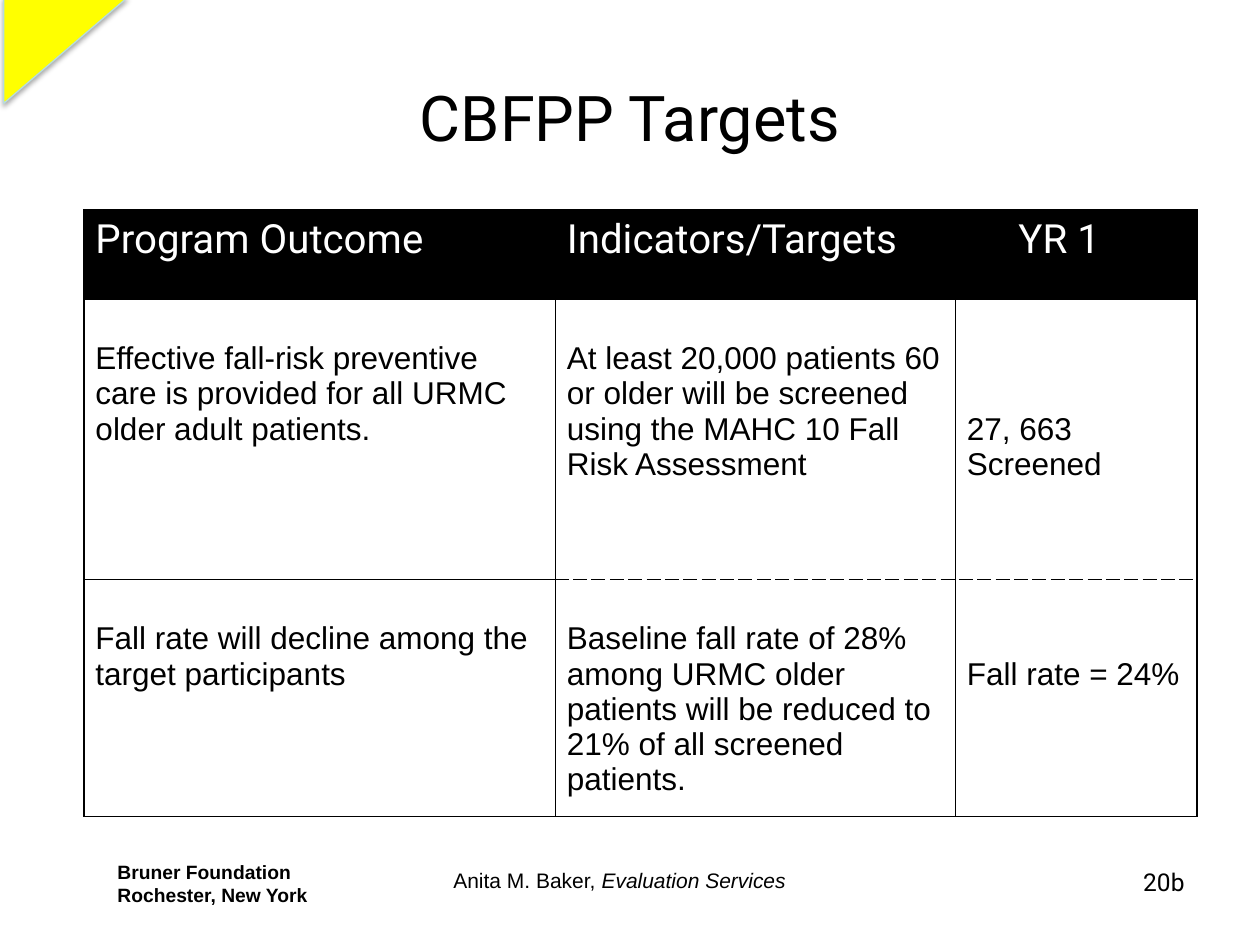
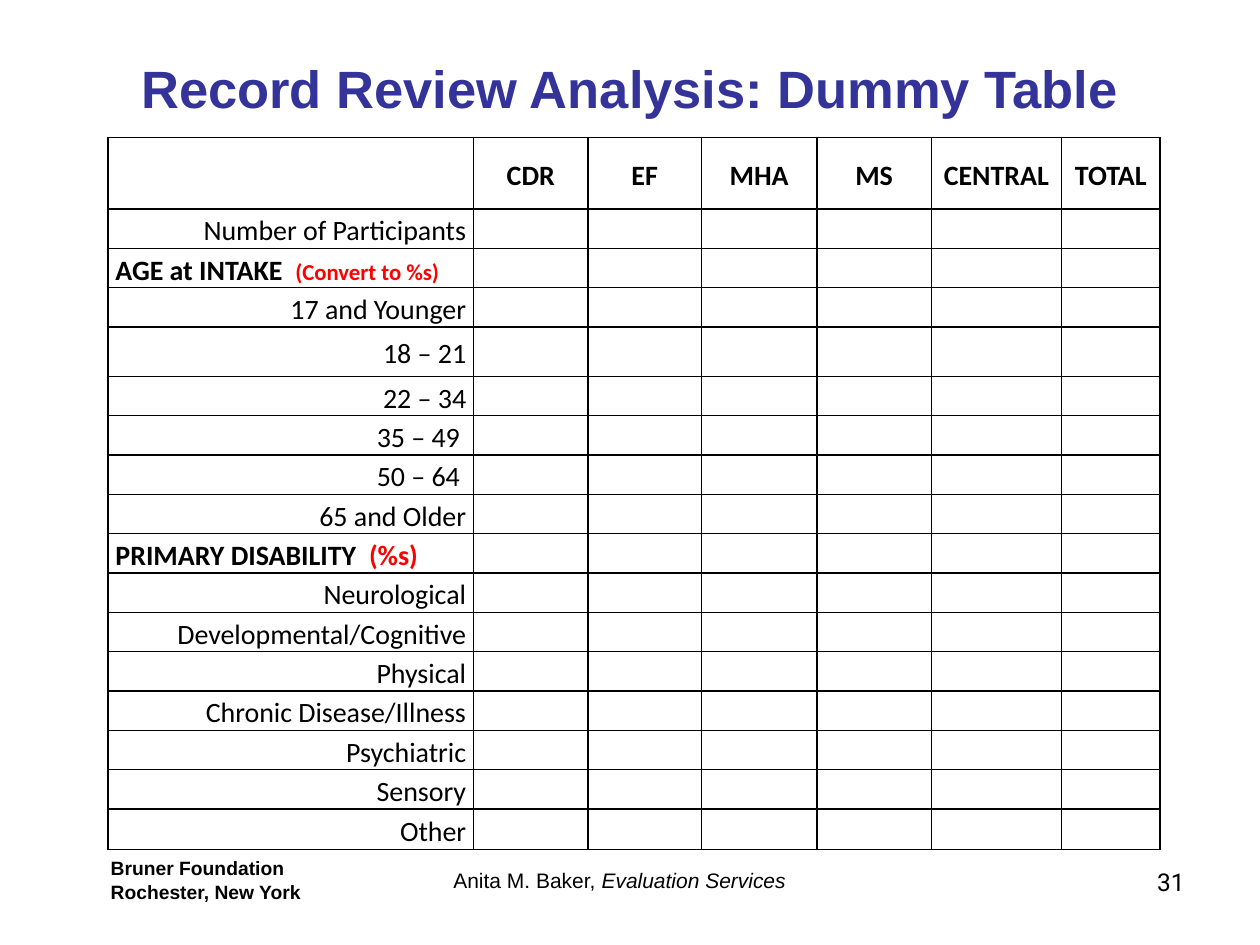
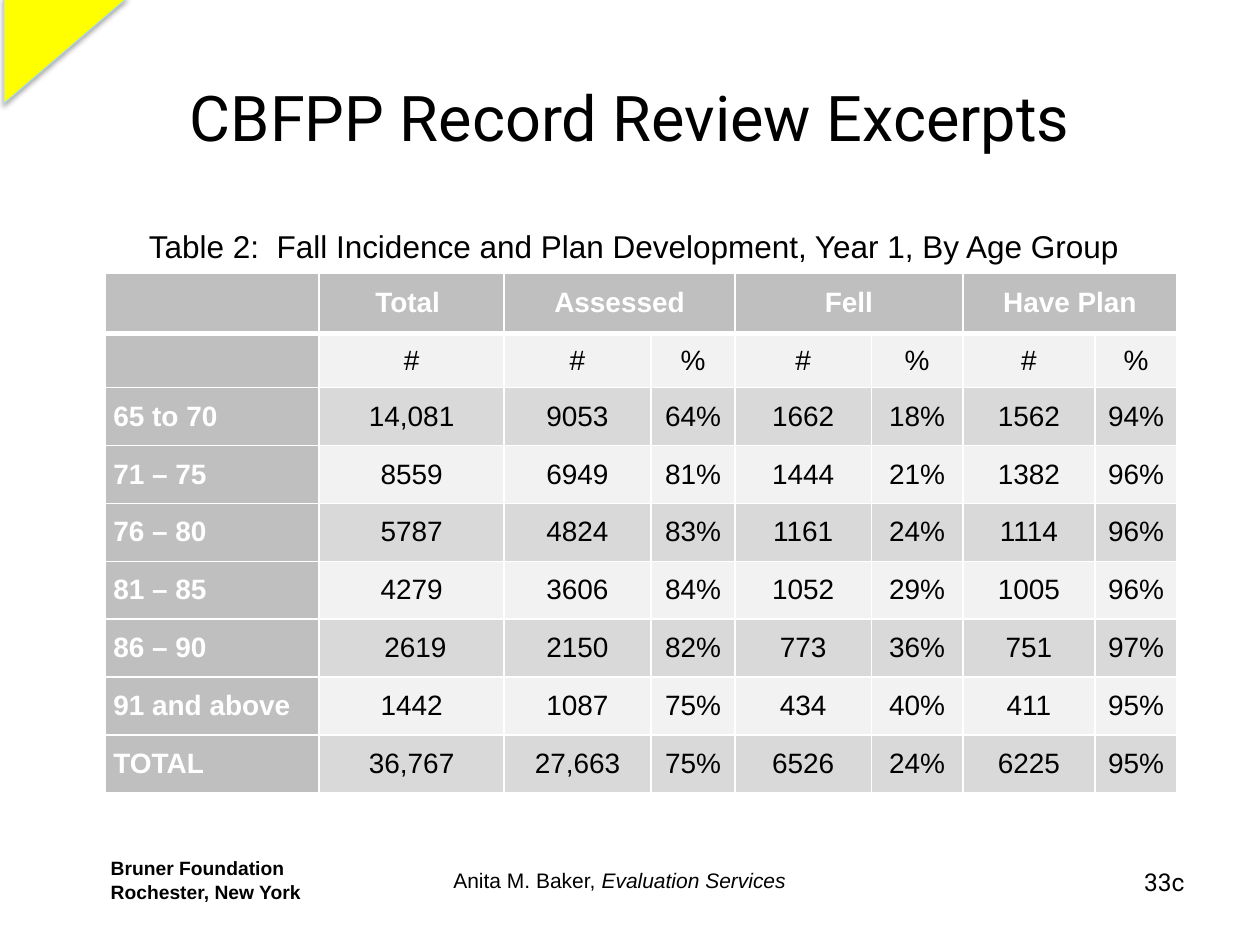
from lxml import etree
from pptx import Presentation
from pptx import util as u
from pptx.dml.color import RGBColor
from pptx.enum import shapes, text
from pptx.oxml import ns

COLORS = {
    "black": "000000", "white": "FFFFFF", "navy": "333399", "red": "FF0000",
    "yellow": "FFFF00", "corner_edge": "B6DCDF",
    "head": "BFBFBF", "light": "F2F2F2", "dark": "D9D9D9",
}
WIDTH, HEIGHT = u.Inches(10), u.Inches(7.5)
COLUMN, ROW = WIDTH / 120, HEIGHT / 90
ALIGN = {"l": text.PP_ALIGN.LEFT, "c": text.PP_ALIGN.CENTER, "r": text.PP_ALIGN.RIGHT}
MIDDLE, TOP = text.MSO_ANCHOR.MIDDLE, text.MSO_ANCHOR.TOP
LINE_18PT = 3.37

TARGETS = [
    [("Effective fall-risk preventive care is provided for all URMC older adult patients.", 1),
     ("At least 20,000 patients 60 or older will be screened using the MAHC 10 Fall Risk Assessment", 1),
     ("27, 663 Screened", 3)],
    [("Fall rate will decline among the target participants", 1),
     ("Baseline fall rate of 28% among URMC older patients will be reduced to 21% of all screened patients.", 1),
     ("Fall rate = 24%", 2)],
]
SITES = ["CDR", "EF", "MHA", "MS", "CENTRAL", "TOTAL"]
RECORD_LABELS = [
    "Number of Participants",
    [("AGE at INTAKE  ", {}), ("(Convert to %s)", {"size": 13, "color": "red"})],
    "17 and Younger", "18 – 21", "22 – 34", "35 – 49 ", "50 – 64 ", "65 and Older",
    [("PRIMARY DISABILITY  ", {}), ("(%s)", {"color": "red"})],
    "Neurological", "Developmental/Cognitive", "Physical", "Chronic Disease/Illness",
    "Psychiatric", "Sensory", "Other",
]
FALL_HEADS = {1: "Total ", 2: "Assessed", 4: "Fell", 6: "Have Plan"}
FALLS = [
    ["", "#", "#", "%", "#", "%", "#", "%"],
    ["65 to 70", "14,081", "9053", "64%", "1662", "18%", "1562", "94%"],
    ["71 – 75", "8559", "6949", "81%", "1444", "21%", "1382", "96%"],
    ["76 – 80", "5787", "4824", "83%", "1161", "24%", "1114", "96%"],
    ["81 – 85", "4279", "3606", "84%", "1052", "29%", "1005", "96%"],
    ["86 – 90", " 2619", "2150", "82%", "773", "36%", "751", "97%"],
    ["91 and above", "1442", "1087", "75%", "434", "40%", "411", "95%"],
    ["TOTAL", "36,767", "27,663", "75%", "6526", "24%", "6225", "95%"],
]


def rgb(name):
    return RGBColor.from_string(COLORS[name])


def box(x, y, w, h):
    return int(x * COLUMN), int(y * ROW), int(w * COLUMN), int(h * ROW)


def sub(parent, tag, **attrs):
    return etree.SubElement(parent, ns.qn(tag), {k: str(v) for k, v in attrs.items()})


def write(tf, paragraphs, size=18, font="Arial", color="black", bold=False,
          italic=False, align="l", spacing=None, tab=None):
    if isinstance(paragraphs, str):
        paragraphs = [paragraphs]
    for i, runs in enumerate(paragraphs):
        p = tf.add_paragraph() if i else tf.paragraphs[0]
        p.alignment = ALIGN[align]
        if spacing:
            p.line_spacing = spacing
        if tab:
            tabs = sub(p._p.get_or_add_pPr(), "a:tabLst")
            sub(tabs, "a:tab", pos=int(tab * COLUMN), algn="l")
        if not runs:
            sub(p._p, "a:endParaRPr", sz=size * 100)
            continue
        for words, change in [(runs, {})] if isinstance(runs, str) else runs:
            r = p.add_run()
            r.text = words
            r.font.size = u.Pt(change.get("size", size))
            r.font.name = font
            r.font.bold = change.get("bold", bold)
            r.font.italic = change.get("italic", italic)
            r.font.color.rgb = rgb(change.get("color", color))


def add_text(s, place, paragraphs, **fmt):
    tf = s.shapes.add_textbox(*box(*place)).text_frame
    tf.word_wrap = True
    write(tf, paragraphs, **fmt)


def add_slide(prs, title, number, place=(6, 3.6, 108, 15), sponsor=(9.36, 81), **fmt):
    s = prs.slides.add_slide(prs.slide_layouts[5])
    sp = s.shapes.title
    sp.left, sp.top, sp.width, sp.height = box(*place)
    sp.text_frame.vertical_anchor = MIDDLE
    write(sp.text_frame, title, align="c", **{"size": 36, "font": "Roboto", **fmt})
    add_text(s, (*sponsor, 25, 5.64), ["Bruner Foundation", "Rochester, New York"],
             size=11, bold=True)
    add_text(s, (42, 82.08, 36, 6.84),
             [[("Anita M. Baker, ", {}), ("Evaluation Services", {"italic": True})]], size=12)
    add_text(s, (86, 82, 28, 6.2), number, size=14, font="Roboto", align="r")
    return s


def add_corner(s):
    sp = s.shapes.add_shape(shapes.MSO_SHAPE.RIGHT_TRIANGLE, *box(1.2, -1.1, 10.1, 11.8))
    sp.rotation = 90
    sp.fill.solid()
    sp.fill.fore_color.rgb = rgb("yellow")
    sp.line.color.rgb = rgb("corner_edge")
    sp.line.width = u.Pt(0.75)
    sp.shadow.inherit = False
    effects = sp._element.spPr.find(ns.qn("a:effectLst"))
    shadow = sub(effects, "a:outerShdw", blurRad=u.Pt(3.1), dist=u.Pt(1.8),
                 dir=90 * 60000, rotWithShape=0)
    sub(sub(shadow, "a:srgbClr", val=COLORS["black"]), "a:alpha", val=35000)


def add_grid(s, left, top, cols, rows):
    frame = s.shapes.add_table(len(rows), len(cols), *box(left, top, sum(cols), sum(rows)))
    table = frame.table
    table.first_row = table.horz_banding = False
    for column, w in zip(table.columns, cols):
        column.width = int(w * COLUMN)
    for row, h in zip(table.rows, rows):
        row.height = int(h * ROW)
    return table


def fill_cell(cell, words, fill=None, anchor=MIDDLE, side=0.8, top=0, bottom=0,
              edge="black", wide=(), dashed=(), **fmt):
    cell.margin_left = cell.margin_right = int(side * COLUMN)
    cell.margin_top, cell.margin_bottom = int(top * ROW), int(bottom * ROW)
    cell.vertical_anchor = anchor
    write(cell.text_frame, words, **fmt)
    if fill:
        cell.fill.solid()
        cell.fill.fore_color.rgb = rgb(fill)
    else:
        cell.fill.background()
    tc_pr = cell._tc.get_or_add_tcPr()
    for i, name in enumerate("LRTB"):
        ln = sub(tc_pr, "a:ln" + name, w=u.Pt(3 if name in wide else 1))
        sub(sub(ln, "a:solidFill"), "a:srgbClr", val=COLORS[edge])
        sub(ln, "a:prstDash", val="lgDash" if name in dashed else "solid")
        tc_pr.insert(i, ln)


def targets_slide(prs):
    s = add_slide(prs, "CBFPP Targets", "20b", sponsor=(10, 81.36))
    table = add_grid(s, 8, 20, [44.9, 38.1, 23], [8.5, 26.7, 19.8])
    table.cell(0, 1).merge(table.cell(0, 2))
    padding = {"anchor": TOP, "side": 1.1, "bottom": 0.6}
    for c, head in enumerate(["Program Outcome", "Indicators/Targets\tYR 1", ""]):
        fill_cell(table.cell(0, c), head, fill="black", top=0.6, size=23, font="Roboto",
                  color="white", tab=43 if c == 1 else None, **padding)
    for r, line in enumerate(TARGETS, 1):
        for c, (words, lines_down) in enumerate(line):
            fill_cell(table.cell(r, c), words, fill="white", top=0.6 + lines_down * LINE_18PT,
                      dashed="BT"[r - 1] if c else "", **padding)
    add_corner(s)


def record_review_slide(prs):
    s = add_slide(prs, "Record Review Analysis: Dummy Table", "31",
                  place=(9.36, 3.6, 101.28, 9.48),
                  size=30, font="Arial", color="navy", bold=True)
    heights = [6.8] + [3.75] * 3 + [4.7] + [3.75] * 11 + [3.85]
    table = add_grid(s, 10.3, 13.1, [34.8, 10.9, 10.8, 11, 10.9, 12.4, 9.4], heights)
    body = {"size": 16, "font": "Calibri", "spacing": 1.15, "side": 0.7}
    for c, site in enumerate([""] + SITES):
        fill_cell(table.cell(0, c), site, bold=True, align="c", **body)
    for r, label in enumerate(RECORD_LABELS, 1):
        section = isinstance(label, list)
        fill_cell(table.cell(r, 0), [label], bold=section,
                  align="l" if section else "r", **body)
        for c in range(1, len(SITES) + 1):
            fill_cell(table.cell(r, c), "", size=10)


def excerpts_slide(prs):
    s = add_slide(prs, "CBFPP Record Review Excerpts", "33c")
    add_text(s, (13, 21, 96, 4.8),
             "Table 2:  Fall Incidence and Plan Development, Year 1, By Age Group")
    table = add_grid(s, 10, 26, [20.4, 17.6, 14, 8, 13, 8.7, 12.6, 7.8],
                     [5.75, 5.15] + [5.52] * 7)
    for c in (2, 4, 6):
        table.cell(0, c).merge(table.cell(0, c + 1))
    label = {"fill": "head", "color": "white", "bold": True}
    for c in range(8):
        fill_cell(table.cell(0, c), FALL_HEADS.get(c, ""), edge="white", wide="B",
                  size=16, align="c", **label)
    for r, line in enumerate(FALLS, 1):
        for c, words in enumerate(line):
            value = {"fill": "light" if r % 2 else "dark", "align": "c"}
            fill_cell(table.cell(r, c), words, edge="white", wide="T" if r == 1 else "",
                      size=16, **(value if c else label))
    add_corner(s)


def main():
    prs = Presentation()
    prs.slide_width, prs.slide_height = WIDTH, HEIGHT
    targets_slide(prs)
    record_review_slide(prs)
    excerpts_slide(prs)
    prs.save("out.pptx")


if __name__ == "__main__":
    main()
